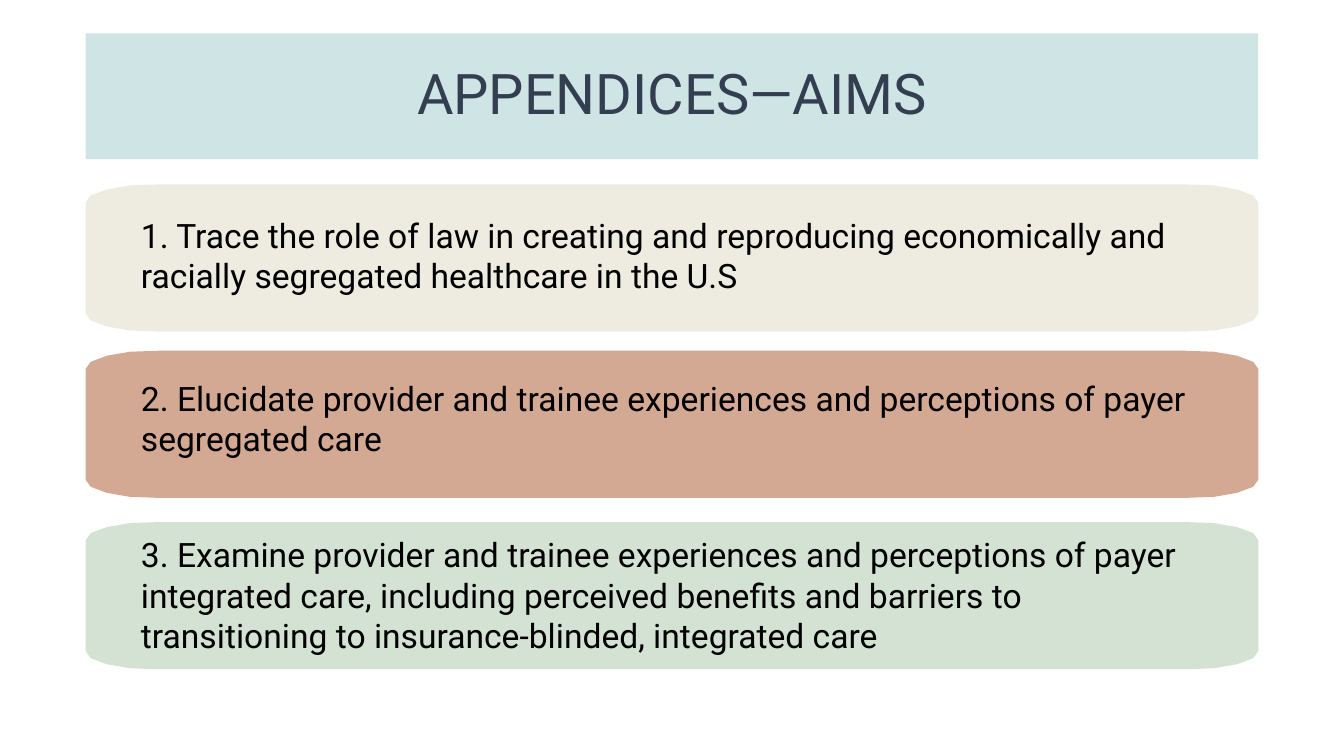
"""Build the appendix slide that lists the three study aims."""
from dataclasses import dataclass

from pptx import Presentation
from pptx.dml.color import RGBColor
from pptx.enum.shapes import MSO_SHAPE
from pptx.enum.text import MSO_ANCHOR, MSO_AUTO_SIZE, PP_ALIGN
from pptx.util import Pt

RECTANGLE = MSO_SHAPE.RECTANGLE
TOP, MIDDLE = MSO_ANCHOR.TOP, MSO_ANCHOR.MIDDLE
GROW, FIXED = MSO_AUTO_SIZE.SHAPE_TO_FIT_TEXT, MSO_AUTO_SIZE.NONE
LEFT, CENTER = PP_ALIGN.LEFT, PP_ALIGN.CENTER

PX = 9144
FONT = "Roboto"
PANEL_LEFT, PANEL_WIDTH, PANEL_HEIGHT = 85, 1163, 146
TEXT_LEFT = 130
CORNER = [(72, 0), (44, 1), (21, 5), (5, 11), (0, 18)]

TITLE_FRAME = {
    "word_wrap": True, "auto_size": FIXED, "vertical_anchor": MIDDLE,
    "margin_left": 7 * PX, "margin_right": 7 * PX,
    "margin_top": 4 * PX, "margin_bottom": 4 * PX,
}
AIM_FRAME = {"word_wrap": True, "auto_size": GROW, "vertical_anchor": TOP}
TITLE_PARAGRAPH = {"alignment": CENTER, "line_spacing": 0.9}
AIM_PARAGRAPH = {"alignment": LEFT}


@dataclass(frozen=True)
class Aim:
    """One aim: its panel and the text box on it."""
    panel_top: int
    color: str
    text_top: int
    text_width: int
    text_height: int
    text: str
    filled: bool = False


AIMS = [
    Aim(183, "EEECE1", 208, 1071, 91,
        "1. Trace the role of law in creating and reproducing economically "
        "and racially segregated healthcare in the U.S"),
    Aim(348, "D4A994", 370, 1104, 91,
        "2. Elucidate provider and trainee experiences and perceptions of "
        "payer segregated care"),
    Aim(518, "D3E2D2", 525, 1063, 131,
        "3. Examine provider and trainee experiences and perceptions of payer "
        "integrated care, including perceived benefits and barriers to "
        "transitioning to insurance-blinded, integrated care", filled=True),
]


def rgb(value: str) -> RGBColor:
    """Turn a hex string into a colour."""
    return RGBColor.from_string(value)


def apply(target, values: dict) -> None:
    """Set each named attribute on the target."""
    for name, value in values.items():
        setattr(target, name, value)


def paint(shape, color: str) -> None:
    """Give a shape a flat fill without line or shadow."""
    shape.fill.solid()
    shape.fill.fore_color.rgb = rgb(color)
    shape.line.fill.background()
    shape.shadow.inherit = False


def write(shape, text: str, size: int, color: str, frame: dict, layout: dict) -> None:
    """Put one formatted paragraph into a shape."""
    apply(shape.text_frame, frame)
    paragraph = shape.text_frame.paragraphs[0]
    apply(paragraph, layout)
    run = paragraph.add_run()
    run.text = text
    apply(run.font, {"name": FONT, "size": Pt(size)})
    run.font.color.rgb = rgb(color)


def add_panel(slide, top: int, color: str) -> None:
    """Draw a panel whose four corners mirror one cut corner."""
    right, bottom = PANEL_LEFT + PANEL_WIDTH, top + PANEL_HEIGHT
    upper_left = [(PANEL_LEFT + x, top + y) for x, y in CORNER]
    lower_left = [(PANEL_LEFT + x, bottom - y) for x, y in reversed(CORNER)]
    lower_right = [(right - x, bottom - y) for x, y in CORNER]
    upper_right = [(right - x, top + y) for x, y in reversed(CORNER)]
    points = upper_left + lower_left + lower_right + upper_right
    builder = slide.shapes.build_freeform(*points[0], scale=PX)
    builder.add_line_segments(points[1:], close=True)
    paint(builder.convert_to_shape(), color)


def add_title(slide) -> None:
    """Draw the title band."""
    box = (PANEL_LEFT * PX, 33 * PX, PANEL_WIDTH * PX, 125 * PX)
    band = slide.shapes.add_shape(RECTANGLE, *box)
    paint(band, "CFE5E5")
    write(band, "APPENDICES—AIMS", 40, "333F50", TITLE_FRAME, TITLE_PARAGRAPH)


def add_aim(slide, aim: Aim) -> None:
    """Draw one aim panel with its text."""
    add_panel(slide, aim.panel_top, aim.color)
    box = (TEXT_LEFT * PX, aim.text_top * PX, aim.text_width * PX, aim.text_height * PX)
    if aim.filled:
        shape = slide.shapes.add_shape(RECTANGLE, *box)
        paint(shape, aim.color)
    else:
        shape = slide.shapes.add_textbox(*box)
    write(shape, aim.text, 24, "000000", AIM_FRAME, AIM_PARAGRAPH)


def main() -> None:
    """Build and save the presentation."""
    presentation = Presentation()
    presentation.slide_width, presentation.slide_height = 1333 * PX, 750 * PX
    slide = presentation.slides.add_slide(presentation.slide_layouts[6])
    add_title(slide)
    for aim in AIMS:
        add_aim(slide, aim)
    presentation.save("out.pptx")


if __name__ == "__main__":
    main()
